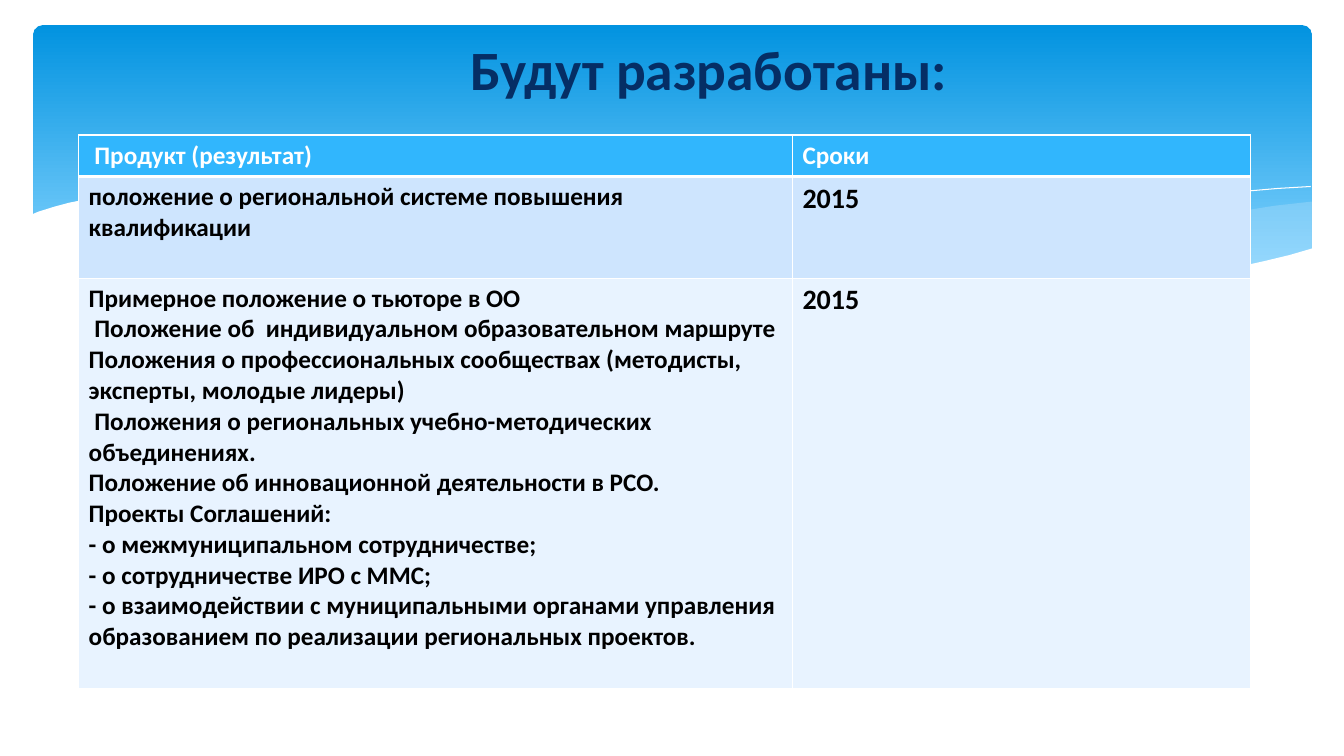
from dataclasses import dataclass

from lxml import etree
from pptx import Presentation
from pptx import util as u
from pptx.dml.color import RGBColor
from pptx.enum import shapes, text
from pptx.oxml import ns


@dataclass(frozen=True)
class Theme:
    font: str = "Calibri"
    title_size: float = 39.6
    body_size: float = 18
    year_size: float = 20
    title: str = "052E65"
    white: str = "FFFFFF"
    black: str = "000000"
    header: str = "31B6FD"
    sky_top: str = "0293E0"
    sky_bottom: str = "83D3FE"
    haze: str = "C6E7FC"


@dataclass(frozen=True)
class Wave:
    points: tuple[tuple[float, float], ...]
    fill: str | None = None
    opacity: int = 100


@dataclass(frozen=True)
class PlanRow:
    product: str
    term: str
    height: float
    fill: str
    color: str
    term_size: float
    bottom_border: float = 1


THEME = Theme()

WAVES = (
    Wave(((13.01, 2), (12.65, 2.04), (12.08, 2.13), (11.47, 2.23), (10.73, 2.37),
          (10.05, 2.48), (9.41, 2.57), (8.82, 2.65), (9.4, 2.71), (9.93, 2.75),
          (10.41, 2.77), (10.85, 2.78), (11.26, 2.77), (11.74, 2.73), (12.18, 2.67),
          (12.57, 2.59), (12.84, 2.52), (13.01, 2.47)), THEME.haze, 29),
    Wave(((11.9, 2.73), (11.16, 2.65), (10.34, 2.54), (9.41, 2.4), (8.39, 2.22),
          (7.78, 2.11), (7.21, 2.03), (6.69, 1.96), (6.19, 1.91), (5.6, 1.87),
          (5.06, 1.85), (4.59, 1.86), (4.18, 1.88), (3.82, 1.91), (4.56, 1.99),
          (5.39, 2.11), (5.99, 2.22), (7.06, 2.4), (8.02, 2.55), (8.87, 2.66),
          (9.63, 2.74), (10.3, 2.77), (10.9, 2.78), (11.43, 2.77)), THEME.haze, 40),
    Wave(((4.12, 1.95), (4.58, 1.9), (5.16, 1.87), (5.77, 1.87), (6.52, 1.9),
          (7.42, 1.97), (8.48, 2.08), (9.7, 2.26), (10.6, 2.41), (11.58, 2.61),
          (12.1, 2.72))),
    Wave(((8.18, 2.57), (8.7, 2.46), (9.27, 2.35), (9.97, 2.23), (10.75, 2.1),
          (11.55, 1.99), (11.94, 1.94), (12.32, 1.9), (12.67, 1.87), (13, 1.85))),
    Wave(((13.03, 2.46), (12.79, 2.53), (12.54, 2.59), (12.27, 2.65), (11.98, 2.69),
          (11.51, 2.74), (10.78, 2.77), (9.92, 2.74), (9.18, 2.68), (8.34, 2.58),
          (7.4, 2.45), (6.34, 2.27), (5.58, 2.13), (4.86, 2.02), (4.21, 1.94),
          (3.61, 1.88), (3.06, 1.85), (2.58, 1.84), (2.14, 1.84), (1.76, 1.86),
          (1.42, 1.89), (1.13, 1.93), (0.89, 1.97), (0.69, 2.01), (0.54, 2.05),
          (0.38, 2.1), (0.31, 2.13), (0.31, 3.29), (13.03, 3.29)), THEME.white),
)

DOCUMENTS = "\n".join((
    "Примерное положение о тьюторе в ОО",
    " Положение об  индивидуальном образовательном маршруте",
    "Положения о профессиональных сообществах (методисты, эксперты, молодые лидеры)",
    " Положения о региональных учебно-методических объединениях.",
    "Положение об инновационной деятельности в РСО.",
    "Проекты Соглашений:",
    "- о межмуниципальном сотрудничестве;",
    "- о сотрудничестве ИРО с ММС;",
    "- о взаимодействии с муниципальными органами управления образованием "
    "по реализации региональных проектов.",
))

PLAN = (
    PlanRow(" Продукт (результат)", "Сроки", 0.41, THEME.header, THEME.white,
            THEME.body_size, 3),
    PlanRow("положение о региональной системе повышения квалификации", "2015", 1.01,
            "CEE5FE", THEME.black, THEME.year_size),
    PlanRow(DOCUMENTS, "2015", 4.07, "E8F3FF", THEME.black, THEME.year_size),
)
COLUMN_WIDTHS = (7.08, 4.54)


def rgb(color: str) -> RGBColor:
    return RGBColor.from_string(color)


def format_text(frame, size: float, color: str) -> None:
    for paragraph in frame.paragraphs:
        for run in paragraph.runs:
            run.font.name = THEME.font
            run.font.size = u.Pt(size)
            run.font.bold = True
            run.font.color.rgb = rgb(color)


def draw_sky(slide) -> None:
    sky = slide.shapes.add_shape(
        shapes.MSO_SHAPE.ROUNDED_RECTANGLE,
        u.Inches(0.33), u.Inches(0.25), u.Inches(12.68), u.Inches(2.7))
    sky.adjustments[0] = 0.034
    sky.shadow.inherit = False
    sky.line.fill.background()
    sky.fill.gradient()
    sky.fill.gradient_angle = 270
    stops = ((0, THEME.sky_top), (0.9, THEME.sky_bottom))
    for stop, (position, color) in zip(sky.fill.gradient_stops, stops):
        stop.position = position
        stop.color.rgb = rgb(color)


def draw_wave(slide, wave: Wave) -> None:
    points = [(u.Inches(x), u.Inches(y)) for x, y in wave.points]
    builder = slide.shapes.build_freeform(*points[0])
    builder.add_line_segments(points[1:], close=wave.fill is not None)
    outline = builder.convert_to_shape()
    outline.shadow.inherit = False
    if wave.fill is None:
        outline.fill.background()
        outline.line.color.rgb = rgb(THEME.white)
        outline.line.width = u.Pt(0)
        return
    outline.line.fill.background()
    outline.fill.solid()
    outline.fill.fore_color.rgb = rgb(wave.fill)
    if wave.opacity < 100:
        color = outline._element.spPr.find(".//" + ns.qn("a:srgbClr"))
        etree.SubElement(color, ns.qn("a:alpha"), val=str(wave.opacity * 1000))


def set_borders(cell, top: float, bottom: float) -> None:
    properties = cell._tc.get_or_add_tcPr()
    for side, width in (("L", 1), ("R", 1), ("T", top), ("B", bottom)):
        border = etree.SubElement(properties, ns.qn(f"a:ln{side}"), w=str(u.Pt(width)))
        fill = etree.SubElement(border, ns.qn("a:solidFill"))
        etree.SubElement(fill, ns.qn("a:srgbClr"), val=THEME.white)


def draw_plan(slide) -> None:
    plan = slide.shapes.add_table(
        len(PLAN), len(COLUMN_WIDTHS), u.Inches(0.78), u.Inches(1.34),
        u.Inches(sum(COLUMN_WIDTHS)), u.Inches(sum(row.height for row in PLAN))).table
    for column, width in zip(plan.columns, COLUMN_WIDTHS):
        column.width = u.Inches(width)
    top_border = 1
    for index, row in enumerate(PLAN):
        plan.rows[index].height = u.Inches(row.height)
        contents = ((row.product, THEME.body_size), (row.term, row.term_size))
        for cell, (words, size) in zip(plan.rows[index].cells, contents):
            cell.text_frame.text = words
            format_text(cell.text_frame, size, row.color)
            set_borders(cell, top_border, row.bottom_border)
            cell.fill.solid()
            cell.fill.fore_color.rgb = rgb(row.fill)
        top_border = row.bottom_border


def place_title(slide) -> None:
    heading = slide.shapes.title
    heading.left, heading.top = u.Inches(1.55), u.Inches(0.33)
    heading.width, heading.height = u.Inches(10.96), u.Inches(0.7)
    frame = heading.text_frame
    frame.text = "Будут разработаны:"
    frame.word_wrap = True
    frame.auto_size = text.MSO_AUTO_SIZE.NONE
    frame.vertical_anchor = text.MSO_ANCHOR.MIDDLE
    frame.paragraphs[0].alignment = text.PP_ALIGN.CENTER
    format_text(frame, THEME.title_size, THEME.title)
    slide.shapes._spTree.append(heading._element)


def main() -> None:
    deck = Presentation()
    deck.slide_width, deck.slide_height = u.Inches(13.33), u.Inches(7.5)
    slide = deck.slides.add_slide(deck.slide_layouts[5])
    draw_sky(slide)
    for wave in WAVES:
        draw_wave(slide, wave)
    draw_plan(slide)
    place_title(slide)
    deck.save("out.pptx")


if __name__ == "__main__":
    main()
